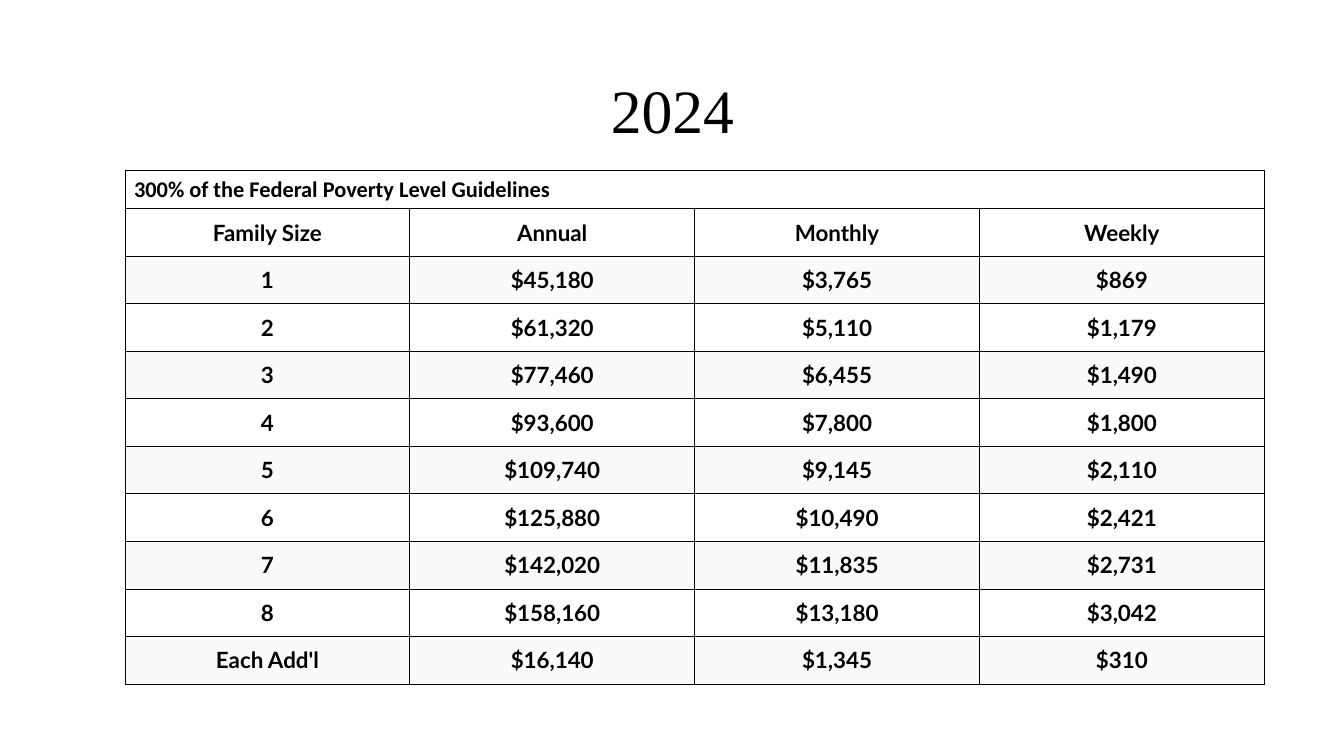
import pptx
import pptx.util
import pptx.dml.color
import pptx.enum.text
import pptx.oxml.ns
import lxml.etree

Inches = pptx.util.Inches
Pt = pptx.util.Pt
PP_ALIGN = pptx.enum.text.PP_ALIGN
MIDDLE = pptx.enum.text.MSO_ANCHOR.MIDDLE

COLORS = {"ink": "000000", "plain": "FFFFFF", "band": "FAFAFA"}
CAPTION = "300% of the Federal Poverty Level Guidelines"
CAPTION_HEIGHT = 0.38
GUIDELINES = [
    ("Family Size", "Annual", "Monthly", "Weekly"),
    ("1", "$45,180", "$3,765", "$869"),
    ("2", "$61,320", "$5,110", "$1,179"),
    ("3", "$77,460", "$6,455", "$1,490"),
    ("4", "$93,600", "$7,800", "$1,800"),
    ("5", "$109,740", "$9,145", "$2,110"),
    ("6", "$125,880", "$10,490", "$2,421"),
    ("7", "$142,020", "$11,835", "$2,731"),
    ("8", "$158,160", "$13,180", "$3,042"),
    ("Each Add'l", "$16,140", "$1,345", "$310"),
]


def rgb(name):
    return pptx.dml.color.RGBColor.from_string(COLORS[name])


def write(tf, text, font, size, bold, align):
    tf.text = text
    p = tf.paragraphs[0]
    p.alignment = align
    r = p.runs[0]
    r.font.name = font
    r.font.size = Pt(size)
    r.font.bold = bold
    r.font.color.rgb = rgb("ink")
    return p


def add_borders(cell):
    qn = pptx.oxml.ns.qn
    tc_pr = cell._tc.get_or_add_tcPr()
    for side in ("a:lnL", "a:lnR", "a:lnT", "a:lnB"):
        ln = lxml.etree.SubElement(tc_pr, qn(side), w=str(Pt(0.75)))
        fill = lxml.etree.SubElement(ln, qn("a:solidFill"))
        lxml.etree.SubElement(fill, qn("a:srgbClr"), val=COLORS["ink"])


def style_cell(cell, fill, margin_y):
    add_borders(cell)
    cell.fill.solid()
    cell.fill.fore_color.rgb = rgb(fill)
    cell.vertical_anchor = MIDDLE
    cell.margin_left = cell.margin_right = Inches(0.09)
    cell.margin_top = cell.margin_bottom = Inches(margin_y)


def add_title(s, x, y, w, h):
    tf = s.shapes.add_textbox(Inches(x), Inches(y), Inches(w), Inches(h)).text_frame
    tf.word_wrap = True
    tf.vertical_anchor = MIDDLE
    p = write(tf, "2024", "Times New Roman", 44, False, PP_ALIGN.CENTER)
    p.line_spacing = 0.9


def add_guidelines(s, x, y, w, h):
    n_rows, n_cols = len(GUIDELINES), len(GUIDELINES[0])
    table = s.shapes.add_table(
        n_rows + 1, n_cols, Inches(x), Inches(y), Inches(w), Inches(h)
    ).table
    table.first_row = table.horz_banding = False
    for col in table.columns:
        col.width = Inches(w / n_cols)
    for row in table.rows:
        row.height = Inches((h - CAPTION_HEIGHT) / n_rows)
    table.rows[0].height = Inches(CAPTION_HEIGHT)

    for c in range(n_cols):
        style_cell(table.cell(0, c), "plain", 0.04)
    caption = table.cell(0, 0)
    caption.merge(table.cell(0, n_cols - 1))
    write(caption.text_frame, CAPTION, "Calibri", 16, True, PP_ALIGN.LEFT)

    for i, values in enumerate(GUIDELINES):
        for c, value in enumerate(values):
            cell = table.cell(i + 1, c)
            style_cell(cell, "band" if i % 2 else "plain", 0.09)
            write(cell.text_frame, value, "Lato", 16, True, PP_ALIGN.CENTER)


def main():
    prs = pptx.Presentation()
    prs.slide_width = Inches(13.33)
    prs.slide_height = Inches(7.5)
    s = prs.slides.add_slide(prs.slide_layouts[6])
    add_title(s, 0.92, 0.4, 11.5, 1.45)
    add_guidelines(s, 1.24, 1.69, 11.3, 5.1)
    prs.save("out.pptx")


if __name__ == "__main__":
    main()
